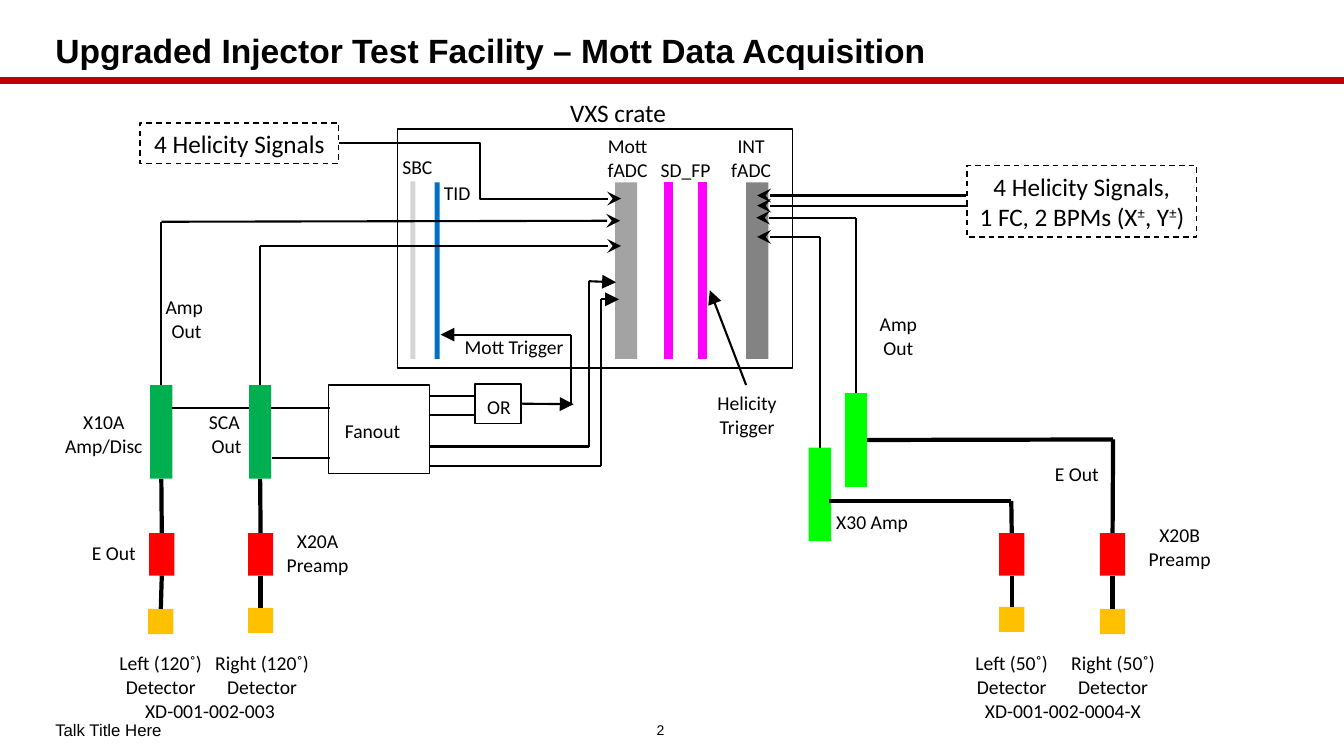
from dataclasses import dataclass
from itertools import pairwise

from lxml.etree import SubElement
from pptx import Presentation
from pptx.dml.color import RGBColor
from pptx.enum.dml import MSO_LINE
from pptx.enum.shapes import MSO_CONNECTOR, MSO_SHAPE
from pptx.enum.text import MSO_ANCHOR, MSO_AUTO_SIZE, PP_ALIGN
from pptx.oxml.ns import qn
from pptx.util import Emu, Pt

EMU_PER_PX = 9144  # 100 px to the inch
TOP, LEFT, BOTTOM, RIGHT = range(4)


@dataclass(frozen=True)
class Theme:
    ink: str = "000000"
    rule: str = "C00000"
    detector: str = "FFC000"
    preamp: str = "FF0000"
    shaper: str = "00B050"
    amplifier: str = "00FF00"
    sbc: str = "D5D5D5"
    tid: str = "0070C0"
    mott_adc: str = "A3A3A3"
    int_adc: str = "838383"
    front_panel: str = "FF00FF"
    title_font: str = "Arial"
    label_font: str = "Calibri"
    title: int = 24
    heading: int = 18
    label: int = 14
    footer: int = 12
    page_number: int = 10
    outline: float = 1
    thin: float = 1.5
    heavy: float = 3
    rule_weight: float = 4.5


THEME = Theme()

# name, fill, left, top, width, height
BLOCKS = [
    ("SBC", THEME.sbc, 407, 180, 5, 176),
    ("TID", THEME.tid, 431, 181, 5, 175),
    ("Mott fADC", THEME.mott_adc, 610, 181, 22, 175),
    ("INT fADC", THEME.int_adc, 740, 181, 22, 175),
    ("amp left 120", THEME.shaper, 149, 382, 22, 93),
    ("amp right 120", THEME.shaper, 247, 382, 22, 93),
    ("amp left 50", THEME.amplifier, 802, 444, 22, 93),
    ("amp right 50", THEME.amplifier, 838, 390, 22, 93),
    ("preamp left 120", THEME.preamp, 148, 529, 25, 42),
    ("preamp right 120", THEME.preamp, 246, 529, 25, 42),
    ("preamp left 50", THEME.preamp, 991, 529, 25, 42),
    ("preamp right 50", THEME.preamp, 1091, 529, 25, 42),
    ("detector left 120", THEME.detector, 147, 604, 25, 25),
    ("detector right 120", THEME.detector, 246, 603, 25, 25),
    ("detector left 50", THEME.detector, 991, 602, 25, 25),
    ("detector right 50", THEME.detector, 1091, 604, 25, 25),
]
FRAMES = [
    ("crate", 394, 128, 392, 237),
    ("fanout", 326, 382, 100, 88),
    ("OR", 471, 381, 46, 39),
]
CHANNELS = ["left 120", "right 120", "left 50", "right 50"]

# points of each route; a point is (x, y) or (block name, side)
HEAVY_ROUTES = [
    *[[(f"preamp {channel}", BOTTOM), (f"detector {channel}", TOP)] for channel in CHANNELS],
    *[[(f"amp {channel}", BOTTOM), (f"preamp {channel}", TOP)] for channel in CHANNELS[:2]],
    [("preamp right 50", TOP), (1104, 436), ("amp right 50", RIGHT)],
    [("preamp left 50", TOP), (1003, 497), (822, 497)],
]
THIN_ROUTES = [
    [(171, 405), (247, 405)],
    [(269, 405), (327, 405)],
    [(270, 454), (327, 454)],
    [(427, 393), (471, 393)],
    [(427, 412), (471, 412)],
]
STEALTH_ROUTES = [
    [("amp left 120", TOP), (160, 220), (615, 219)],
    [("amp right 120", TOP), (258, 244), (616, 244)],
    [("amp right 50", TOP), (849, 216), (750, 216)],
    [("amp left 50", TOP), (813, 235), (751, 235)],
    [(958, 194), (751, 194)],
    [(960, 204), (751, 204)],
]
TRIANGLE_ROUTES = [
    [("OR", RIGHT), (569, 401)],
    [(566, 400), (566, 332), (437, 332)],
    [(427, 443), (584, 443), (584, 279), (611, 280)],
    [(427, 462), (596, 462), (596, 297), (614, 297)],
    [(740, 382), (704, 288)],
]

# text, left, top, width
LABELS = [
    ("TID", 430, 175, 47),
    ("SBC", 389, 149, 50),
    ("Mott\nfADC", 592, 128, 61),
    ("SD_FP", 645, 152, 70),
    ("INT\nfADC", 714, 128, 62),
    ("Mott Trigger", 448, 327, 124),
    ("Helicity\nTrigger", 701, 383, 80),
    ("Fanout", 329, 411, 81),
    ("OR", 470, 387, 50),
    ("SCA\n Out", 195, 402, 55),
    ("Amp \nOut", 154, 288, 62),
    ("X10A\nAmp/Disc", 54, 402, 98),
    ("E Out", 81, 532, 64),
    ("X20A\nPreamp", 274, 520, 82),
    ("Left (120˚)\nDetector", 108, 641, 103),
    ("Right (120˚)\nDetector", 203, 641, 114),
    ("Amp\nOut", 862, 305, 58),
    ("X30 Amp", 819, 501, 92),
    ("E Out", 1033, 453, 70),
    ("X20B\nPreamp", 1129, 514, 82),
    ("Left (50˚)\nDetector", 957, 641, 93),
    ("Right (50˚)\nDetector", 1052, 641, 104),
]
PART_NUMBERS = [("XD-001-002-003", 134, 688, 151), ("XD-001-002-0004-X", 967, 688, 176)]


def px(*lengths):
    return [Emu(length * EMU_PER_PX) for length in lengths]


def color(value):
    return RGBColor.from_string(value)


def format_para(para, size, font, align, bold=False):
    para.alignment = align
    para.font.size = Pt(size)
    para.font.name = font
    para.font.bold = bold
    para.font.color.rgb = color(THEME.ink)


def fill_text(frame, text, size, font=THEME.label_font, align=PP_ALIGN.CENTER):
    """One paragraph per line; each ± is raised."""
    frame.text = text
    for para in frame.paragraphs:
        format_para(para, size, font, align)
        if "±" in para.text:
            pieces = para.text.replace("±", "|±|").split("|")
            para.clear()
            for piece in pieces:
                span = para.add_run()
                span.text = piece
                if piece == "±":
                    span._r.get_or_add_rPr().set("baseline", "30000")


def add_label(page, text, left, top, width, size=THEME.label, align=PP_ALIGN.CENTER):
    height = 57 if "\n" in text else 34
    frame = page.shapes.add_textbox(*px(left, top, width, height)).text_frame
    frame.word_wrap = False
    frame.auto_size = MSO_AUTO_SIZE.SHAPE_TO_FIT_TEXT
    fill_text(frame, text, size, align=align)


def add_footer(page, text, left, width, size, align):
    frame = page.shapes.add_textbox(*px(left, 707, width, 34)).text_frame
    frame.word_wrap = True
    frame.vertical_anchor = MSO_ANCHOR.MIDDLE
    fill_text(frame, text, size, THEME.title_font, align)


def add_block(page, bounds, fill=None, line=None):
    block = page.shapes.add_shape(MSO_SHAPE.RECTANGLE, *px(*bounds))
    block.shadow.inherit = False
    for part, value in ((block.fill, fill), (block.line.fill, line)):
        if value:
            part.solid()
            part.fore_color.rgb = color(value)
        else:
            part.background()
    if line:
        block.line.width = Pt(THEME.outline)
    return block


def add_signal_box(page, text, bounds):
    box = add_block(page, bounds, line=THEME.ink)
    box.line.dash_style = MSO_LINE.DASH
    box.text_frame.word_wrap = False
    fill_text(box.text_frame, text, THEME.heading)
    return box


def add_wire(page, blocks, start, end, weight=THEME.thin, arrow=None,
             kind=MSO_CONNECTOR.STRAIGHT, ink=THEME.ink):
    places = [(0, 0) if point[0] in blocks else point for point in (start, end)]
    wire = page.shapes.add_connector(kind, *px(*places[0], *places[1]))
    for point, connect in ((start, wire.begin_connect), (end, wire.end_connect)):
        if point[0] in blocks:
            connect(blocks[point[0]], point[1])
    wire.line.width = Pt(weight)
    wire.line.color.rgb = color(ink)
    if arrow:
        SubElement(wire.line._get_or_add_ln(), qn("a:tailEnd"), type=arrow, w="lg", len="lg")
    SubElement(wire._element.spPr, qn("a:effectLst"))


def add_route(page, blocks, points, weight=THEME.thin, arrow=None):
    """Straight wires through the points, with the arrowhead on the last."""
    for start, end in pairwise(points):
        add_wire(page, blocks, start, end, weight, arrow if end == points[-1] else None)


def add_title(page, text):
    title = page.shapes.title
    title.left, title.top, title.width, title.height = px(45, 26, 1234, 53)
    title.text_frame.text = text
    title.text_frame.vertical_anchor = MSO_ANCHOR.MIDDLE
    para = title.text_frame.paragraphs[0]
    format_para(para, THEME.title, THEME.title_font, PP_ALIGN.LEFT, bold=True)
    para.line_spacing = 0.9


def main():
    deck = Presentation()
    deck.slide_width, deck.slide_height = px(1333, 750)
    page = deck.slides.add_slide(deck.slide_layouts[5])
    add_title(page, "Upgraded Injector Test Facility – Mott Data Acquisition")
    add_wire(page, {}, (0, 80), (1333, 80), THEME.rule_weight, ink=THEME.rule)
    add_footer(page, "Talk Title Here", 45, 571, THEME.footer, PP_ALIGN.LEFT)
    add_footer(page, "2", 616, 78, THEME.page_number, PP_ALIGN.CENTER)

    blocks = {name: add_block(page, bounds, line=THEME.ink) for name, *bounds in FRAMES}
    blocks |= {name: add_block(page, bounds, fill) for name, fill, *bounds in BLOCKS}
    for left in (659, 693):
        add_block(page, (left, 181, 8, 175), THEME.front_panel, THEME.front_panel)
    blocks["helicity"] = add_signal_box(page, "4 Helicity Signals", (139, 122, 197, 40))
    add_signal_box(page, "4 Helicity Signals,\n1 FC, 2 BPMs (X±, Y±)", (959, 164, 228, 71))

    for routes, weight, arrow in (
        (HEAVY_ROUTES, THEME.heavy, None),
        (THIN_ROUTES, THEME.thin, None),
        (STEALTH_ROUTES, THEME.thin, "stealth"),
        (TRIANGLE_ROUTES, THEME.thin, "triangle"),
    ):
        for points in routes:
            add_route(page, blocks, points, weight, arrow)
    add_wire(page, blocks, ("helicity", RIGHT), (616, 197), arrow="stealth",
             kind=MSO_CONNECTOR.ELBOW)

    add_label(page, "VXS crate", 555, 92, 116, THEME.heading)
    for label in LABELS:
        add_label(page, *label)
    for label in PART_NUMBERS:
        add_label(page, *label, align=PP_ALIGN.LEFT)
    deck.save("out.pptx")


if __name__ == "__main__":
    main()
